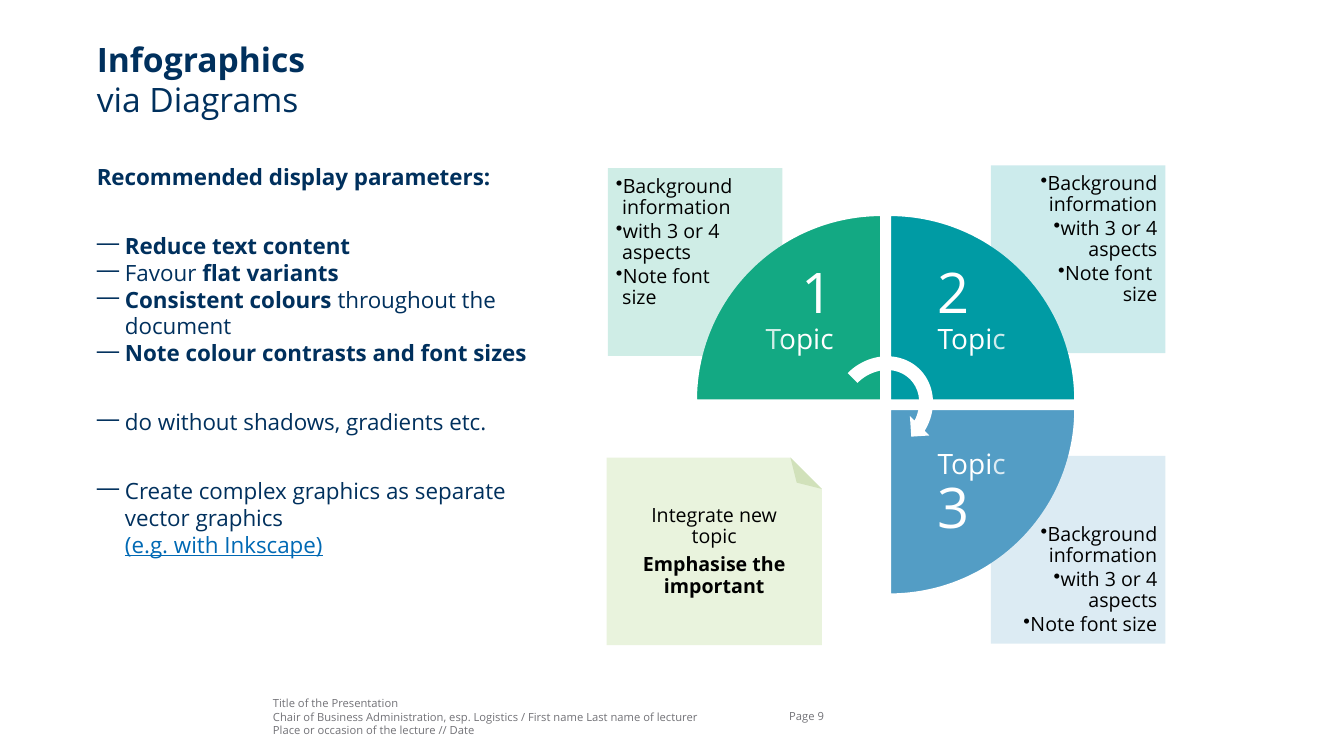
import copy
import math
import pptx
import pptx.dml.color
import pptx.enum.shapes
import pptx.enum.text
import pptx.oxml
import pptx.oxml.ns
import pptx.util

Cm = pptx.util.Cm
Pt = pptx.util.Pt
RGBColor = pptx.dml.color.RGBColor
SHAPE = pptx.enum.shapes.MSO_SHAPE
ALIGN = pptx.enum.text.PP_ALIGN
ANCHOR = pptx.enum.text.MSO_ANCHOR
qn = pptx.oxml.ns.qn

NAVY = RGBColor(0x00, 0x30, 0x5D)
LINK = RGBColor(0x00, 0x69, 0xB4)
GREY = RGBColor(0x72, 0x72, 0x77)
BLACK = RGBColor(0x00, 0x00, 0x00)
WHITE = RGBColor(0xFF, 0xFF, 0xFF)
GREEN = RGBColor(0x13, 0xA9, 0x83)
TEAL = RGBColor(0x00, 0x9B, 0xA4)
BLUE = RGBColor(0x53, 0x9D, 0xC5)
LIME = RGBColor(0x93, 0xC3, 0x56)
FOLD = RGBColor(0xD1, 0xE1, 0xBA)

FONT = "Open Sans"
BOLD = {"bold": True}
UNDERLINE = {"underline": True, "color": LINK}
BIG = {"size": Pt(40)}

TITLE = [[("Infographics\n", BOLD), ("via Diagrams", {})]]
FOOTER = [
    [("Title of the Presentation", {})],
    [("Chair of Business Administration, esp. Logistics / First name Last name of lecturer\n"
      "Place or occasion of the lecture // Date", {})],
]
PAGE = [[("Page 9", {})]]
BODY = [
    (0, None, [("Recommended display parameters:", BOLD)]),
    (30, "—", [("Reduce text content", BOLD)]),
    (0, "—", [("Favour ", {}), ("flat variants", BOLD)]),
    (0, "—", [("Consistent colours ", BOLD), ("throughout the document", {})]),
    (0, "—", [("Note colour contrasts and font sizes", BOLD)]),
    (30, "—", [("do without shadows, gradients etc.", {})]),
    (30, "—", [("Create complex graphics as separate vector graphics\n", {}),
               ("(e.g. with Inkscape)", UNDERLINE)]),
]
ASPECTS = ["Background information", "with 3 or 4 aspects"]
TOPICS = [
    {"color": GREEN, "side": (-1, -1), "runs": [("1\n", BIG), ("Topic", {})],
     "insets": (1.2, 1.32, 1.2, 1.19), "align": ALIGN.RIGHT,
     "panel": (15.32, 4.24), "last": "Note font \nsize",
     "panel_align": ALIGN.LEFT, "panel_anchor": ANCHOR.TOP},
    {"color": TEAL, "side": (1, -1), "runs": [("2\n", BIG), ("Topic", {})],
     "insets": (1.2, 1.32, 1.2, 1.19), "align": ALIGN.LEFT,
     "panel": (24.97, 4.17), "last": "Note font \nsize",
     "panel_align": ALIGN.RIGHT, "panel_anchor": ANCHOR.TOP},
    {"color": BLUE, "side": (1, 1), "runs": [("Topic\n", {}), ("3", BIG)],
     "insets": (1.2, 0.99, 1.2, 1.32), "align": ALIGN.LEFT,
     "panel": (24.97, 11.49), "last": "Note font size",
     "panel_align": ALIGN.RIGHT, "panel_anchor": ANCHOR.BOTTOM},
]
NOTE = [[("Integrate new\ntopic", {})], [("Emphasise the important", BOLD)]]

CENTER = (22.32, 10.2)
HALF_GAP = 0.11
RADIUS = 4.67
ARC_STEPS = 45
TIGHT = 0.9
PANEL_W, PANEL_H = 4.4, 4.73
NOTE_X, NOTE_Y, NOTE_W, NOTE_H, NOTE_FOLD = 15.29, 11.53, 5.42, 4.73, 0.79


def set_frame(sp, insets=(0, 0, 0, 0), anchor=ANCHOR.TOP):
    tf = sp.text_frame
    left, top, right, bottom = map(Cm, insets)
    values = {"word_wrap": True, "vertical_anchor": anchor, "margin_left": left,
              "margin_top": top, "margin_right": right, "margin_bottom": bottom}
    for name, value in values.items():
        setattr(tf, name, value)
    return tf


def add_paragraph(tf, runs, size, color, bullet=None, indent=0, **layout):
    p = tf.paragraphs[0]
    if p.runs:
        p = tf.add_paragraph()
    for name, value in layout.items():
        setattr(p, name, value)
    if bullet:
        pPr = p._p.get_or_add_pPr()
        pPr.set("marL", str(Cm(indent)))
        pPr.set("indent", str(-Cm(indent)))
        bu = pptx.oxml.parse_xml(
            f'<a:buChar {pptx.oxml.ns.nsdecls("a")} char="{bullet}"/>')
        pPr.append(bu)
    for text, style in runs:
        values = {"name": FONT, "size": Pt(size), "color": color, **style}
        ink = values.pop("color")
        for i, line in enumerate(text.split("\n")):
            if i:
                p.add_line_break()
                p._p.findall(qn("a:br"))[-1].append(copy.deepcopy(r._r.rPr))
            if line:
                r = p.add_run()
                r.text = line
                for name, value in values.items():
                    setattr(r.font, name, value)
                r.font.color.rgb = ink


def add_text(s, box, paragraphs, size, color, anchor=ANCHOR.TOP):
    tf = set_frame(s.shapes.add_textbox(*map(Cm, box)), anchor=anchor)
    for runs in paragraphs:
        add_paragraph(tf, runs, size, color)


def paint(sp, color, alpha=None, line=None):
    sp.shadow.inherit = False
    sp.fill.solid()
    sp.fill.fore_color.rgb = color
    if alpha:
        clr = sp.fill._xPr.find(qn("a:solidFill"))[0]
        clr.append(pptx.oxml.parse_xml(
            f'<a:alpha {pptx.oxml.ns.nsdecls("a")} val="{alpha * 1000}"/>'))
    if line:
        sp.line.color.rgb = line
        sp.line.width = Pt(1.5)
    else:
        sp.line.fill.background()


def add_outline(s, points):
    points = [(Cm(x), Cm(y)) for x, y in points]
    builder = s.shapes.build_freeform(*points[0])
    builder.add_line_segments(points[1:], close=True)
    return builder.convert_to_shape()


def add_topic(s, topic):
    apex = [c + d * HALF_GAP for c, d in zip(CENTER, topic["side"])]
    dx, dy = topic["side"]
    angles = [math.pi / 2 * i / ARC_STEPS for i in range(ARC_STEPS + 1)]
    arc = [(apex[0] + dx * RADIUS * math.cos(a), apex[1] + dy * RADIUS * math.sin(a))
           for a in angles]
    sp = add_outline(s, [apex] + arc)
    paint(sp, topic["color"], line=WHITE)
    tf = set_frame(sp, topic["insets"], ANCHOR.MIDDLE)
    add_paragraph(tf, topic["runs"], 20, WHITE, alignment=topic["align"],
                  line_spacing=TIGHT)

    box = (*topic["panel"], PANEL_W, PANEL_H)
    sp = s.shapes.add_shape(SHAPE.RECTANGLE, *map(Cm, box))
    paint(sp, topic["color"], alpha=20)
    tf = set_frame(sp, (0.2,) * 4, topic["panel_anchor"])
    for text in ASPECTS + [topic["last"]]:
        add_paragraph(tf, [(text, {})], 14, BLACK, "•", 0.16, line_spacing=TIGHT,
                      alignment=topic["panel_align"], space_after=Pt(2))


def add_note(s):
    right, bottom = NOTE_X + NOTE_W, NOTE_Y + NOTE_H
    fold_top = (right - NOTE_FOLD, NOTE_Y)
    fold_side = (right, NOTE_Y + NOTE_FOLD)
    fold_tip = (right - 0.8 * NOTE_FOLD, NOTE_Y + 0.8 * NOTE_FOLD)
    sp = add_outline(s, [(NOTE_X, NOTE_Y), fold_top, fold_side,
                         (right, bottom), (NOTE_X, bottom)])
    paint(sp, LIME, alpha=20)
    tf = set_frame(sp, (0.4,) * 4, ANCHOR.MIDDLE)
    for runs in NOTE:
        add_paragraph(tf, runs, 14, BLACK, alignment=ALIGN.CENTER,
                      line_spacing=TIGHT, space_after=Pt(5))
    paint(add_outline(s, [fold_side, fold_tip, fold_top]), FOLD)


def main():
    prs = pptx.Presentation()
    prs.slide_width, prs.slide_height = Cm(33.87), Cm(19.05)
    s = prs.slides.add_slide(prs.slide_layouts[6])
    add_text(s, (6.88, 17.55, 12.45, 1.02), FOOTER, 8, GREY, ANCHOR.BOTTOM)
    add_text(s, (19.89, 17.53, 1.96, 0.69), PAGE, 8, GREY, ANCHOR.BOTTOM)
    add_text(s, (2.44, 0.97, 29.39, 1.9), TITLE, 24, NAVY)
    tf = set_frame(s.shapes.add_textbox(Cm(2.44), Cm(4.11), Cm(11.96), Cm(11.81)))
    for before, bullet, runs in BODY:
        add_paragraph(tf, runs, 16, NAVY, bullet, 0.71, space_before=Pt(before))
    for topic in TOPICS:
        add_topic(s, topic)
    add_note(s)
    sp = s.shapes.add_shape(SHAPE.CIRCULAR_ARROW, Cm(20.83), Cm(8.74), Cm(2.79), Cm(3.05))
    sp.rotation = 45
    paint(sp, WHITE)
    prs.save("out.pptx")


if __name__ == "__main__":
    main()
